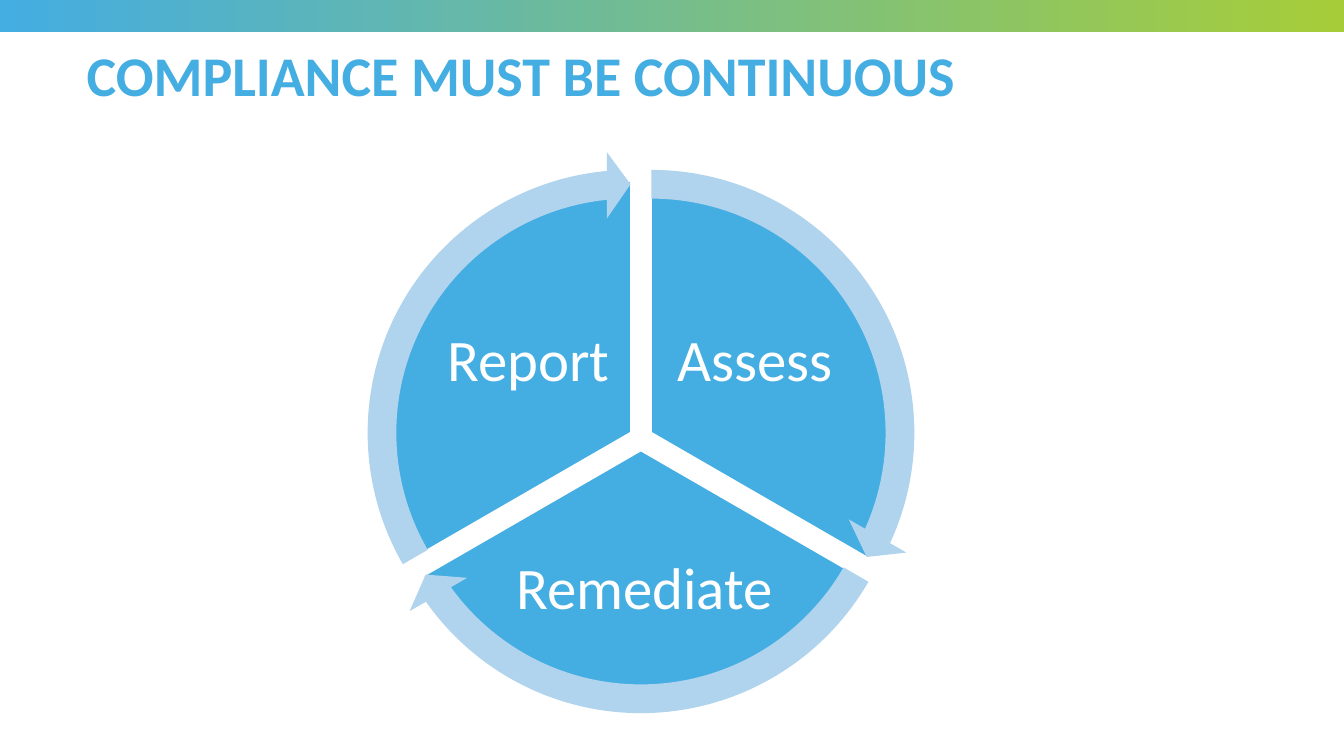
from pptx import Presentation
from pptx import util as u
from pptx.dml import color
from pptx.enum import shapes, text

BLUE, GREEN, PALE, WHITE = "44ADE2", "A6CD39", "B0D3EE", "FFFFFF"
PIE_SIZE, ARROW_SIZE = 358.56, 402.5
STAGES = [
    ("Assess", (285.8, 129.6), (162, 18), (475.2, 205.9, 128.2, 106.6),
     (264.1, 107.9), (14.72, 161.99)),
    ("Remediate", (278.5, 142.6), (18, 90), (364.3, 375.1, 192.2, 93.6),
     (256.5, 120.4), (86.72, 18.01)),
    ("Report", (271.3, 129.6), (90, 162), (313.2, 205.9, 128.2, 106.6),
     (249.1, 107.9), (158.73, 90)),
]


def rgb(value):
    return color.RGBColor.from_string(value)


class SlideBuilder:
    """Draws styled elements on one slide, with lengths in points."""

    font_name = "Calibri"

    def __init__(self, presentation):
        self.slide = presentation.slides.add_slide(presentation.slide_layouts[5])

    def set_text(self, shape, words, size, ink, align, bold=False):
        frame = shape.text_frame
        frame.word_wrap = True
        frame.auto_size = text.MSO_AUTO_SIZE.NONE
        frame.vertical_anchor = text.MSO_ANCHOR.MIDDLE
        paragraph = frame.paragraphs[0]
        paragraph.alignment = align
        paragraph.line_spacing = 0.9
        run = paragraph.add_run()
        run.text = words
        run.font.name = self.font_name
        run.font.size = u.Pt(size)
        run.font.bold = bold
        run.font.color.rgb = rgb(ink)

    def title(self, words, left, top, width, height):
        shape = self.slide.shapes.title
        shape.left, shape.top = u.Pt(left), u.Pt(top)
        shape.width, shape.height = u.Pt(width), u.Pt(height)
        self.set_text(shape, words, 40, BLUE, text.PP_ALIGN.LEFT, bold=True)

    def label(self, words, box):
        shape = self.slide.shapes.add_textbox(*map(u.Pt, box))
        frame = shape.text_frame
        frame.margin_left = frame.margin_right = u.Pt(4.2)
        frame.margin_top = frame.margin_bottom = u.Pt(4.2)
        self.set_text(shape, words, 42, WHITE, text.PP_ALIGN.CENTER)

    def preset(self, kind, box, fill, line=None, adjustments=()):
        shape = self.slide.shapes.add_shape(kind, *map(u.Pt, box))
        shape.shadow.inherit = False
        shape.fill.solid()
        shape.fill.fore_color.rgb = rgb(fill)
        if line:
            shape.line.color.rgb = rgb(line)
            shape.line.width = u.Pt(1)
        else:
            shape.line.fill.background()
        for index, value in enumerate(adjustments):
            shape.adjustments[index] = value
        return shape

    def gradient_bar(self, box, start, end):
        fill = self.preset(shapes.MSO_SHAPE.RECTANGLE, box, start).fill
        fill.gradient()
        fill.gradient_angle = 0
        for stop, position, value in zip(fill.gradient_stops, (0, 1), (start, end)):
            stop.position = position
            stop.color.rgb = rgb(value)

    def slice(self, corner, angles):
        box = (*corner, PIE_SIZE, PIE_SIZE)
        self.preset(shapes.MSO_SHAPE.PIE, box, BLUE, WHITE, angles)

    def cycle_arrow(self, corner, angles):
        box = (*corner, ARROW_SIZE, ARROW_SIZE)
        self.preset(shapes.MSO_SHAPE.CIRCULAR_ARROW, box, PALE,
                    adjustments=(0.051, 3.275, *angles, 0.059))


def main():
    presentation = Presentation()
    presentation.slide_width, presentation.slide_height = u.Pt(960), u.Pt(540)
    builder = SlideBuilder(presentation)
    builder.gradient_bar((0, 0, 960, 23), BLUE, GREEN)
    builder.title("COMPLIANCE MUST BE CONTINUOUS", 54.7, 35.3, 888.5, 41.8)
    for name, pie_corner, pie_angles, label_box, _, _ in STAGES:
        builder.slice(pie_corner, pie_angles)
        builder.label(name, label_box)
    for *_, arrow_corner, arrow_angles in STAGES:
        builder.cycle_arrow(arrow_corner, arrow_angles)
    presentation.save("out.pptx")


if __name__ == "__main__":
    main()
